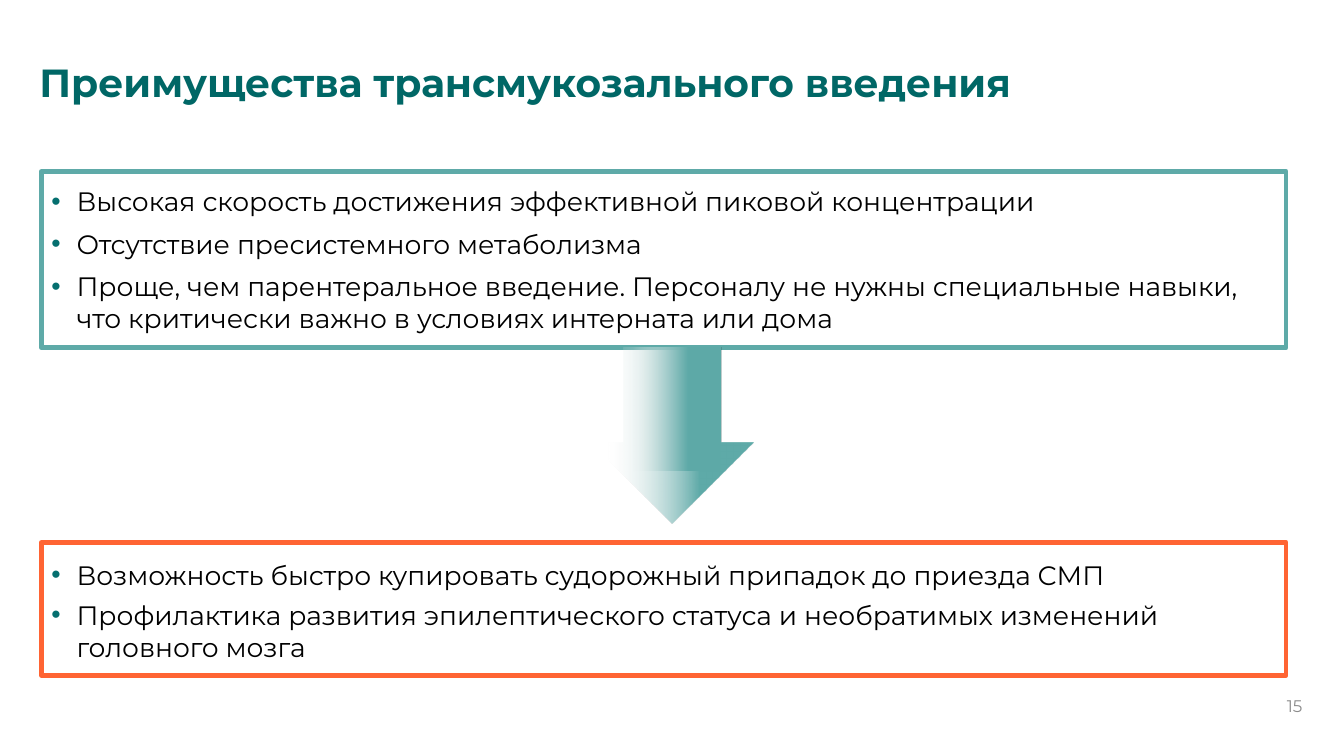
from lxml.etree import SubElement
from pptx import Presentation
from pptx.dml.color import RGBColor
from pptx.enum.shapes import MSO_SHAPE as Preset
from pptx.enum.text import MSO_ANCHOR as Anchor, MSO_AUTO_SIZE as AutoSize, PP_ALIGN as Align
from pptx.oxml.ns import qn
from pptx.util import Pt

FONT = "Montserrat"
TITLE_GREEN = RGBColor(0x00, 0x67, 0x66)
BULLET_GREEN = RGBColor(0x05, 0x6F, 0x6F)
TEAL = RGBColor(0x5E, 0xAA, 0xA8)
ORANGE = RGBColor(0xFF, 0x64, 0x33)
PALE = RGBColor(0xF2, 0xF2, 0xF2)
GRAY = RGBColor(0x8C, 0x8C, 0x8C)
BLACK = RGBColor(0, 0, 0)

LEFT, WIDTH = 29.5, 889.2

# Each item: text, space before, line spacing
ADVANTAGES = [
    ("Высокая скорость достижения эффективной пиковой концентрации", 0, Pt(24)),
    ("Отсутствие пресистемного метаболизма", 7.5, 1.0),
    ("Проще, чем парентеральное введение. Персоналу не нужны специальные навыки, "
     "что критически важно в условиях интерната или дома", 7.7, Pt(22.8)),
]
OUTCOMES = [
    ("Возможность быстро купировать судорожный припадок до приезда СМП", 0, 1.0),
    ("Профилактика развития эпилептического статуса и необратимых изменений "
     "головного мозга", 6, 1.0),
]


def place(shape, left, top, width, height):
    shape.left, shape.top = Pt(left), Pt(top)
    shape.width, shape.height = Pt(width), Pt(height)


def set_font(para, size, color, bold=False):
    font = para.font
    font.name, font.size, font.bold = FONT, Pt(size), bold
    font.color.rgb = color


def add_bullet(para):
    props = para._p.get_or_add_pPr()
    props.set("marL", str(Pt(25.2)))
    props.set("indent", str(Pt(-18)))
    color = SubElement(props, qn("a:buClr"))
    SubElement(color, qn("a:srgbClr"), val=str(BULLET_GREEN))
    SubElement(props, qn("a:buFont"), typeface="Arial")
    SubElement(props, qn("a:buChar"), char="•")


def fill_title(title, text):
    place(title, 20.9, 8.6, 935.3, 104.4)
    frame = title.text_frame
    frame.text = text
    frame.auto_size = AutoSize.NONE
    frame.vertical_anchor = Anchor.MIDDLE
    para = frame.paragraphs[0]
    para.alignment = Align.LEFT
    para.line_spacing = 0.9
    set_font(para, 28, TITLE_GREEN, bold=True)


def fill_list(box, items, top, height, inset_top, border):
    """Turn a body placeholder into a framed bullet list."""
    place(box, LEFT, top, WIDTH, height)
    box.line.color.rgb = border
    box.line.width = Pt(3.25)
    frame = box.text_frame
    frame.word_wrap = True
    frame.auto_size = AutoSize.NONE
    frame.vertical_anchor = Anchor.TOP
    frame.margin_left, frame.margin_right = 0, Pt(8)
    frame.margin_top, frame.margin_bottom = Pt(inset_top), Pt(8.6)
    frame.text = "\n".join(text for text, _, _ in items)
    for para, (_, before, spacing) in zip(frame.paragraphs, items):
        add_bullet(para)
        para.space_before = Pt(before)
        para.line_spacing = spacing
        set_font(para, 19, BLACK)


def add_fading_shape(page, preset, left, top, width, height):
    """Add a borderless shape that fades from clear on the left to teal."""
    shape = page.shapes.add_shape(preset, Pt(left), Pt(top), Pt(width), Pt(height))
    shape.shadow.inherit = False
    shape.line.fill.background()
    shape.fill.gradient()
    shape.fill.gradient_angle = 0
    for stop, position, color in zip(shape.fill.gradient_stops, (0.11, 0.67), (PALE, TEAL)):
        stop.position = position
        stop.color.rgb = color
    clear_color = next(shape._element.spPr.iter(qn("a:srgbClr")))
    SubElement(clear_color, qn("a:alpha"), val="0")
    return shape


def add_page_number(page, number):
    box = page.shapes.add_textbox(Pt(887.8), Pt(482.4), Pt(42.5), Pt(28.8))
    frame = box.text_frame
    frame.word_wrap = True
    frame.vertical_anchor = Anchor.BOTTOM
    frame.margin_left = frame.margin_right = frame.margin_top = frame.margin_bottom = 0
    frame.text = str(number)
    para = frame.paragraphs[0]
    para.alignment = Align.RIGHT
    set_font(para, 12, GRAY)


def main():
    deck = Presentation()
    deck.slide_width, deck.slide_height = Pt(960), Pt(540)
    page = deck.slides.add_slide(deck.slide_layouts.get_by_name("Two Content"))
    title, advantages, outcomes = page.placeholders

    fill_title(title, "Преимущества трансмукозального введения")
    fill_list(advantages, ADVANTAGES, 122.4, 126, 8.6, TEAL)
    fill_list(outcomes, OUTCOMES, 387.4, 95, 11.5, ORANGE)

    arrow = add_fading_shape(page, Preset.DOWN_ARROW, 421.6, 248, 116.6, 126)
    arrow.adjustments[0], arrow.adjustments[1] = 0.6, 0.5
    add_fading_shape(page, Preset.RECTANGLE, 444.6, 248, 69.8, 87.8)

    add_page_number(page, 15)
    deck.save("out.pptx")


if __name__ == "__main__":
    main()
